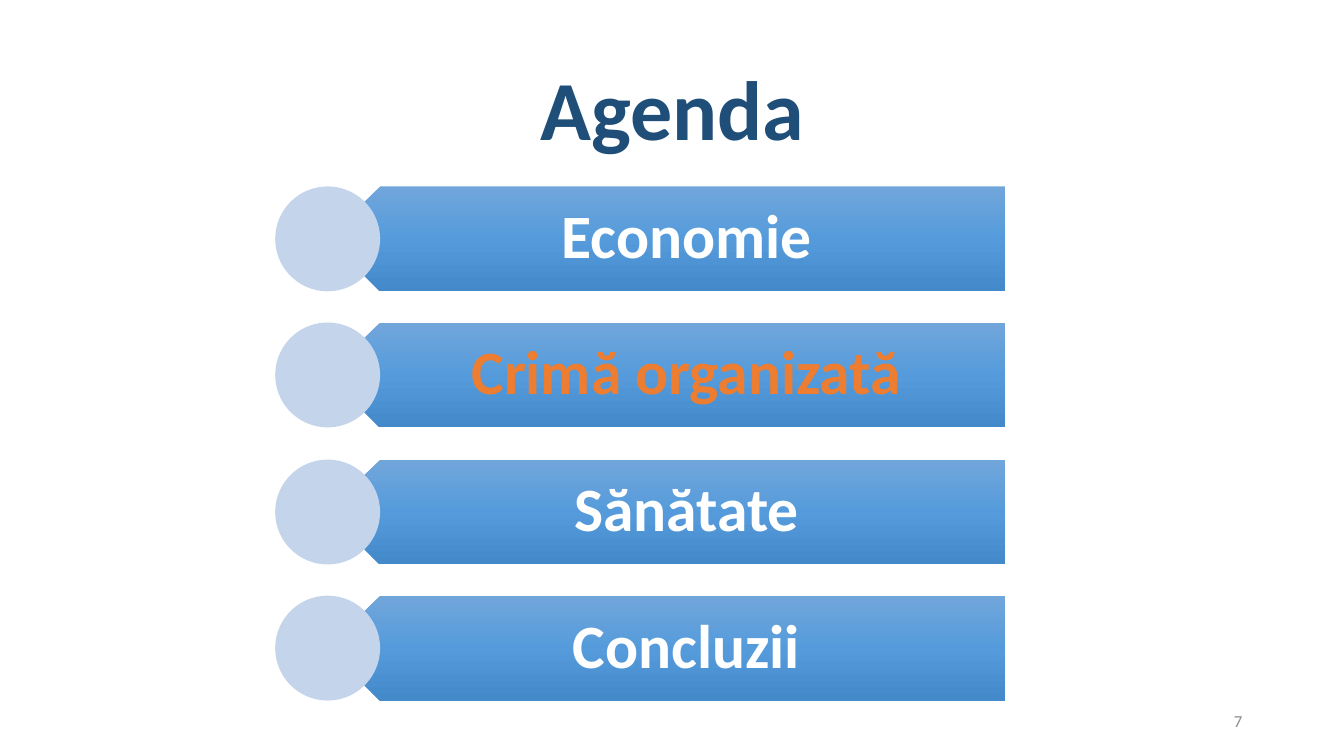
from copy import deepcopy

from pptx import Presentation
from pptx.dml.color import RGBColor
from pptx.enum.shapes import MSO_SHAPE as Shape
from pptx.enum.text import MSO_ANCHOR as Anchor, PP_ALIGN as Align
from pptx.oxml.ns import qn
from pptx.util import Emu, Pt

EMU_PER_PX = 9144
FONT = "Calibri"
WHITE, ORANGE, NAVY, GREY, PALE = "FFFFFF", "ED7D31", "1F4E79", "8C8C8C", "C4D5EB"
BAR_STOPS = [(0, "71A6DB"), (0.5, "559BDB"), (1, "448ACA")]
TOPICS = [
    ("Economie", WHITE),
    ("Crimă organizată", ORANGE),
    ("Sănătate", WHITE),
    ("Concluzii", WHITE),
]
FIRST_TOP, LAST_TOP, ROW_HEIGHT = 185, 591, 104


def px(length):
    return Emu(length * EMU_PER_PX)


def color(hex_value):
    return RGBColor.from_string(hex_value)


def write(box, text, size, hex_value, align, bold=True, spacing=0.9):
    frame = box.text_frame
    frame.word_wrap = True
    frame.vertical_anchor = Anchor.MIDDLE
    frame.text = text
    para = frame.paragraphs[0]
    para.alignment = align
    para.line_spacing = spacing
    para.font.name = FONT
    para.font.size = Pt(size)
    para.font.bold = bold
    para.font.color.rgb = color(hex_value)


def add_title(page, text):
    title = page.shapes.title
    title.left, title.top, title.width, title.height = map(px, (92, 40, 1150, 145))
    write(title, text, 60, NAVY, Align.CENTER)


def add_text(page, left, top, width, height, margins=None):
    box = page.shapes.add_textbox(px(left), px(top), px(width), px(height))
    if margins:
        frame = box.text_frame
        (frame.margin_left, frame.margin_top,
         frame.margin_right, frame.margin_bottom) = map(px, margins)
    return box


def add_plain_shape(page, kind, left, top, width, height):
    shape = page.shapes.add_shape(kind, px(left), px(top), px(width), px(height))
    shape.shadow.inherit = False
    shape.line.fill.background()
    return shape


def fill_gradient(shape, stops):
    shape.fill.gradient()
    shape.fill.gradient_angle = 270
    gradient = shape._element.spPr.find(qn("a:gradFill"))
    gradient.set("rotWithShape", "0")
    stop_list = gradient.find(qn("a:gsLst"))
    stop_list.insert(1, deepcopy(stop_list[0]))
    for stop, (position, hex_value) in zip(shape.fill.gradient_stops, stops):
        stop.position = position
        stop.color.rgb = color(hex_value)


def add_topic(page, top, text, hex_value):
    bar = add_plain_shape(page, Shape.PENTAGON, 325, top, 672, ROW_HEIGHT)
    bar.rotation = 180
    fill_gradient(bar, BAR_STOPS)
    label = add_text(page, 352, top, 646, ROW_HEIGHT, (46, 18, 34, 18))
    write(label, text, 44, hex_value, Align.CENTER)
    circle = add_plain_shape(page, Shape.OVAL, 273, top, ROW_HEIGHT, ROW_HEIGHT)
    circle.fill.solid()
    circle.fill.fore_color.rgb = color(PALE)


def main():
    deck = Presentation()
    deck.slide_width, deck.slide_height = px(1333), px(750)
    page = deck.slides.add_slide(deck.slide_layouts[5])
    add_title(page, "Agenda")
    number = add_text(page, 942, 695, 300, 40)
    write(number, "7", 12, GREY, Align.RIGHT, bold=False, spacing=1)
    pitch = (LAST_TOP - FIRST_TOP) / (len(TOPICS) - 1)
    for row, (text, hex_value) in enumerate(TOPICS):
        add_topic(page, round(FIRST_TOP + row * pitch), text, hex_value)
    deck.save("out.pptx")


if __name__ == "__main__":
    main()
